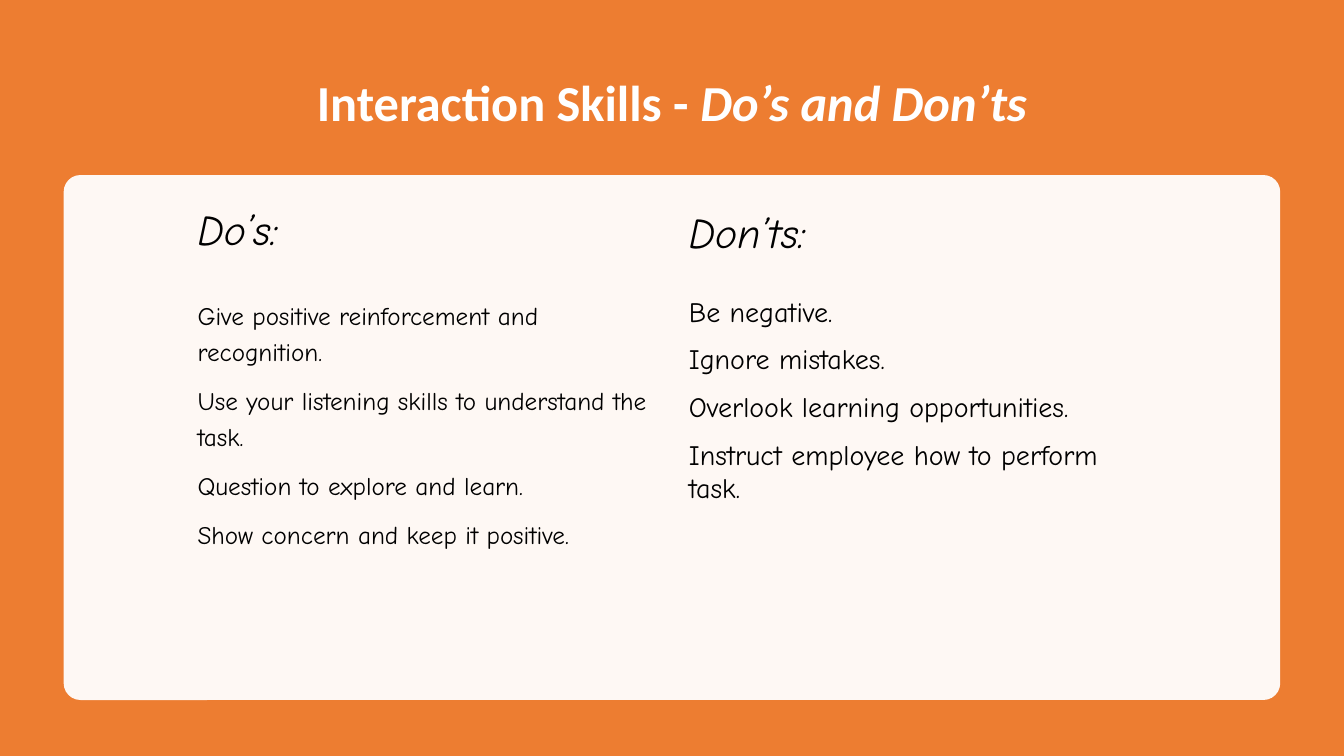
import pptx
import pptx.dml.color
import pptx.enum.shapes
import pptx.enum.text
import pptx.oxml
import pptx.oxml.ns
import pptx.util

Pt = pptx.util.Pt
COLORS = {"orange": "ED7D31", "white": "FFFFFF", "black": "000000"}
SHAPES = pptx.enum.shapes.MSO_SHAPE


class SlideBuilder:
    title_font = "Calibri"
    body_font = "Comic Neue"

    def __init__(self, presentation):
        self.slide = presentation.slides.add_slide(presentation.slide_layouts[5])

    def color(self, name):
        return pptx.dml.color.RGBColor.from_string(COLORS[name])

    def place(self, shape, left, top, width, height):
        shape.left, shape.top = Pt(left), Pt(top)
        shape.width, shape.height = Pt(width), Pt(height)

    def format_run(self, run, font, size, color, bold=False, italic=False):
        run.font.name = font
        run.font.size = Pt(size)
        run.font.bold = bold
        run.font.italic = italic
        run.font.color.rgb = self.color(color)

    def panel(self, kind, box, color, radius=None, opacity=None):
        shape = self.slide.shapes.add_shape(kind, *map(Pt, box))
        shape.shadow.inherit = False
        shape.fill.solid()
        shape.fill.fore_color.rgb = self.color(color)
        shape.line.fill.background()
        if radius is not None:
            shape.adjustments[0] = radius
        if opacity is not None:
            fill_color = shape.element.spPr.find(".//" + pptx.oxml.ns.qn("a:srgbClr"))
            namespace = pptx.oxml.ns.nsdecls("a")
            fill_color.append(pptx.oxml.parse_xml(f'<a:alpha {namespace} val="{opacity * 1000}"/>'))
        return shape

    def backdrop(self, box, color):
        shape = self.panel(SHAPES.RECTANGLE, box, color)
        self.slide.shapes.title.element.addprevious(shape.element)

    def title(self, box, plain, emphasis):
        title = self.slide.shapes.title
        self.place(title, *box)
        frame = title.text_frame
        frame.word_wrap = True
        frame.auto_size = pptx.enum.text.MSO_AUTO_SIZE.NONE
        frame.vertical_anchor = pptx.enum.text.MSO_ANCHOR.MIDDLE
        paragraph = frame.paragraphs[0]
        paragraph.text = plain
        paragraph.add_run().text = emphasis
        paragraph.alignment = pptx.enum.text.PP_ALIGN.CENTER
        paragraph.line_spacing = 0.9
        for run, italic in zip(paragraph.runs, (False, True)):
            self.format_run(run, self.title_font, 36, "white", True, italic)

    def text(self, box, lines, size, italic=False, line_spacing=1.0):
        frame = self.slide.shapes.add_textbox(*map(Pt, box)).text_frame
        frame.word_wrap = True
        frame.text = "\n".join(lines)
        for index, paragraph in enumerate(frame.paragraphs):
            paragraph.line_spacing = line_spacing
            paragraph.space_before = Pt(size / 2 if index else 0)
            for run in paragraph.runs:
                self.format_run(run, self.body_font, size, "black", italic=italic)

    def column(self, left, width, heading_top, heading, advice, size, line_spacing):
        self.text((left, heading_top, width, 54), [heading], 29.9, italic=True)
        self.text((left, 206.6, width, 242.6), advice, size, line_spacing=line_spacing)


def main():
    presentation = pptx.Presentation()
    presentation.slide_width = Pt(960)
    presentation.slide_height = Pt(540)
    builder = SlideBuilder(presentation)
    builder.backdrop((0, 0, 960, 540), "orange")
    builder.title((66, 36, 828, 79), "Interaction Skills - ", "Do’s and Don’ts")
    builder.panel(SHAPES.ROUNDED_RECTANGLE, (45.5, 125, 869, 375), "white", 0.032, 95)
    builder.column(134, 339, 142, "Do’s:", [
        "Give positive reinforcement and recognition.",
        "Use your listening skills to understand the task.",
        "Question to explore and learn.",
        "Show concern and keep it positive.",
    ], 18, 1.2)
    builder.column(485, 341, 144, "Don’ts:", [
        "Be negative.",
        "Ignore mistakes.",
        "Overlook learning opportunities.",
        "Instruct employee how to perform task.",
    ], 20, 1.0)
    presentation.save("out.pptx")


if __name__ == "__main__":
    main()
